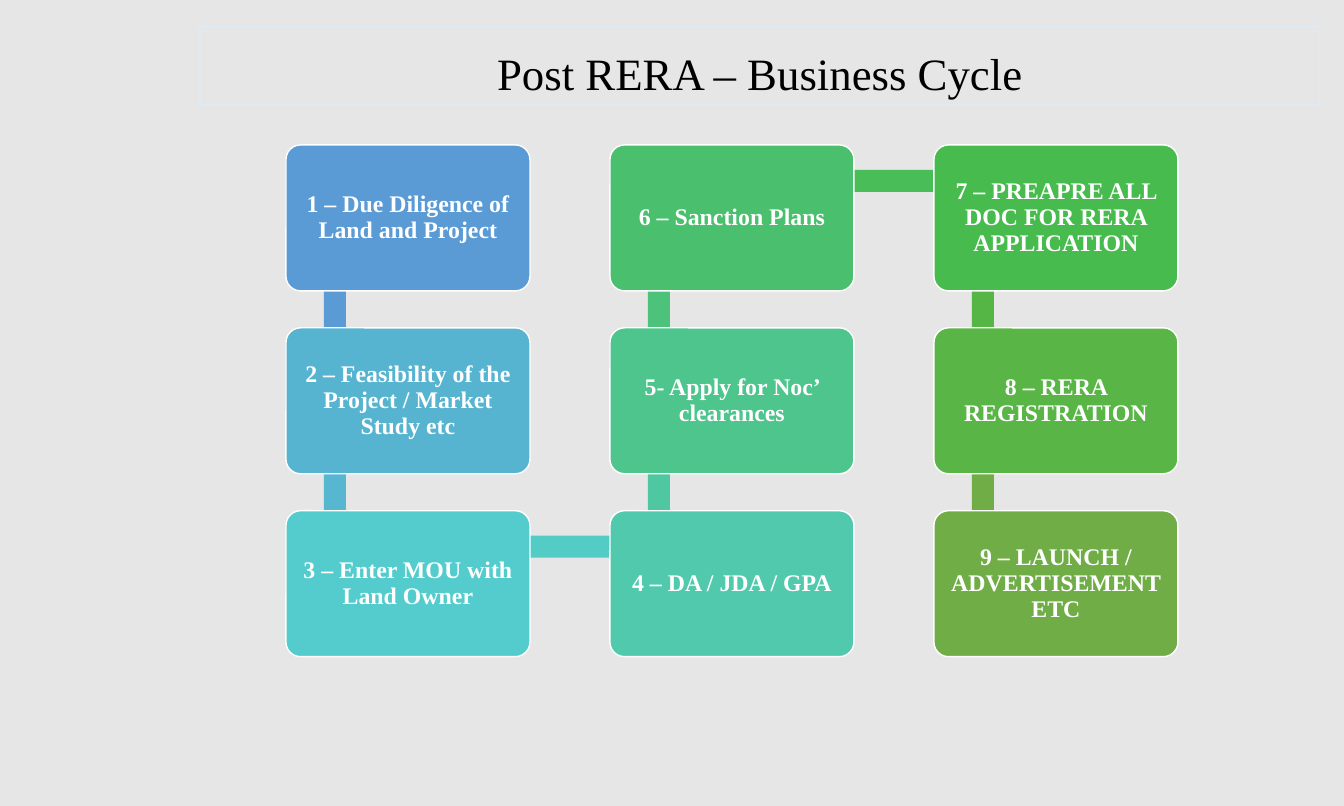
from pptx import Presentation
from pptx.dml.color import RGBColor
from pptx.enum.shapes import MSO_SHAPE
from pptx.enum.text import MSO_ANCHOR, MSO_AUTO_SIZE, PP_ALIGN
from pptx.util import Inches, Pt

RECTANGLE = MSO_SHAPE.RECTANGLE
ROUNDED = MSO_SHAPE.ROUNDED_RECTANGLE
MIDDLE, BOTTOM = MSO_ANCHOR.MIDDLE, MSO_ANCHOR.BOTTOM
CENTER = PP_ALIGN.CENTER
NO_AUTOFIT = MSO_AUTO_SIZE.NONE

EMU_PER_PX = 914400 / 100.8
SLIDE_WIDTH = 1344
ROWS = 3
GRID_LEFT, GRID_TOP = 286, 145
COLUMN_PITCH, ROW_PITCH = 324, 183
BOX_WIDTH, BOX_HEIGHT = 244, 146
LINK_OFFSET_X, LINK_OFFSET_Y, LINK_WIDTH = 49, 36, 22

TITLE_FONT = {"name": "Times New Roman", "size": Pt(32), "bold": False}
STEP_FONT = {"name": "Times New Roman", "size": Pt(17), "bold": True}
TITLE_FRAME = {"word_wrap": True, "auto_size": NO_AUTOFIT, "vertical_anchor": BOTTOM}
PARAGRAPH = {"alignment": CENTER, "line_spacing": 0.9, "space_before": Pt(0)}

STEPS = [
    ("1 – Due Diligence of Land and Project", "5B9BD5"),
    ("2 – Feasibility of the Project / Market Study etc", "57B4D1"),
    ("3 – Enter MOU with Land Owner", "54CCCD"),
    ("4 – DA / JDA / GPA", "51C9AD"),
    ("5- Apply for Noc’ clearances", "4DC58D"),
    ("6 – Sanction Plans", "4AC06E"),
    ("7 – PREAPRE ALL DOC FOR RERA APPLICATION", "48BB4F"),
    ("8 – RERA REGISTRATION", "59B546"),
    ("9 – LAUNCH / ADVERTISEMENT ETC", "70AD47"),
]
LINK_COLORS = ["5B9BD5", "57B7D1", "53CCC5", "4FC7A0", "4CC27B", "48BD58", "55B646", "70AD47"]


def px(length):
    return round(length * EMU_PER_PX)


def paint(color_format, color):
    color_format.rgb = RGBColor.from_string(color)


def apply_format(target, values):
    for name, value in values.items():
        setattr(target, name, value)


def paint_fill(fill, color):
    fill.solid()
    paint(fill.fore_color, color)


def set_outline(shape, color, width):
    paint(shape.line.color, color)
    shape.line.width = Pt(width)


def write_text(shape, text, frame_format, font_format, color):
    frame = shape.text_frame
    apply_format(frame, frame_format)
    paragraph = frame.paragraphs[0]
    apply_format(paragraph, PARAGRAPH)
    run = paragraph.add_run()
    run.text = text
    apply_format(run.font, font_format)
    paint(run.font.color, color)


def add_block(slide, kind, left, top, width, height, color):
    shape = slide.shapes.add_shape(kind, px(left), px(top), px(width), px(height))
    shape.shadow.inherit = False
    paint_fill(shape.fill, color)
    return shape


def step_position(index):
    column, row = divmod(index, ROWS)
    if column % 2:
        row = ROWS - 1 - row
    return GRID_LEFT + column * COLUMN_PITCH, GRID_TOP + row * ROW_PITCH


def add_link(slide, index, color):
    start_x, start_y = step_position(index)
    end_x, end_y = step_position(index + 1)
    left = min(start_x, end_x) + LINK_OFFSET_X
    top = min(start_y, end_y) + LINK_OFFSET_Y
    width, height = abs(end_x - start_x), abs(end_y - start_y)
    if width:
        top -= LINK_WIDTH // 2
    else:
        left -= LINK_WIDTH // 2
    link = add_block(slide, RECTANGLE, left, top, width or LINK_WIDTH, height or LINK_WIDTH, color)
    link.line.fill.background()


def add_step(slide, index, text, color):
    left, top = step_position(index)
    box = add_block(slide, ROUNDED, left, top, BOX_WIDTH, BOX_HEIGHT, color)
    box.adjustments[0] = 0.1
    set_outline(box, "FFFFFF", 1)
    sides = ("left", "top", "right", "bottom")
    frame_format = {f"margin_{side}": px(7) for side in sides}
    frame_format.update(word_wrap=True, vertical_anchor=MIDDLE)
    write_text(box, text, frame_format, STEP_FONT, "FFFFFF")


def format_title(title, text):
    apply_format(title, {"left": px(200), "top": px(27), "width": px(1120), "height": px(78)})
    set_outline(title, "DEEBF7", 0.75)
    write_text(title, text, TITLE_FRAME, TITLE_FONT, "000000")


def main():
    presentation = Presentation()
    presentation.slide_width = px(SLIDE_WIDTH)
    presentation.slide_height = Inches(8)
    slide = presentation.slides.add_slide(presentation.slide_layouts[5])
    paint_fill(slide.background.fill, "E7E6E6")
    format_title(slide.shapes.title, "Post RERA – Business Cycle")
    for index, color in enumerate(LINK_COLORS):
        add_link(slide, index, color)
    for index, (text, color) in enumerate(STEPS):
        add_step(slide, index, text, color)
    presentation.save("out.pptx")


if __name__ == "__main__":
    main()
